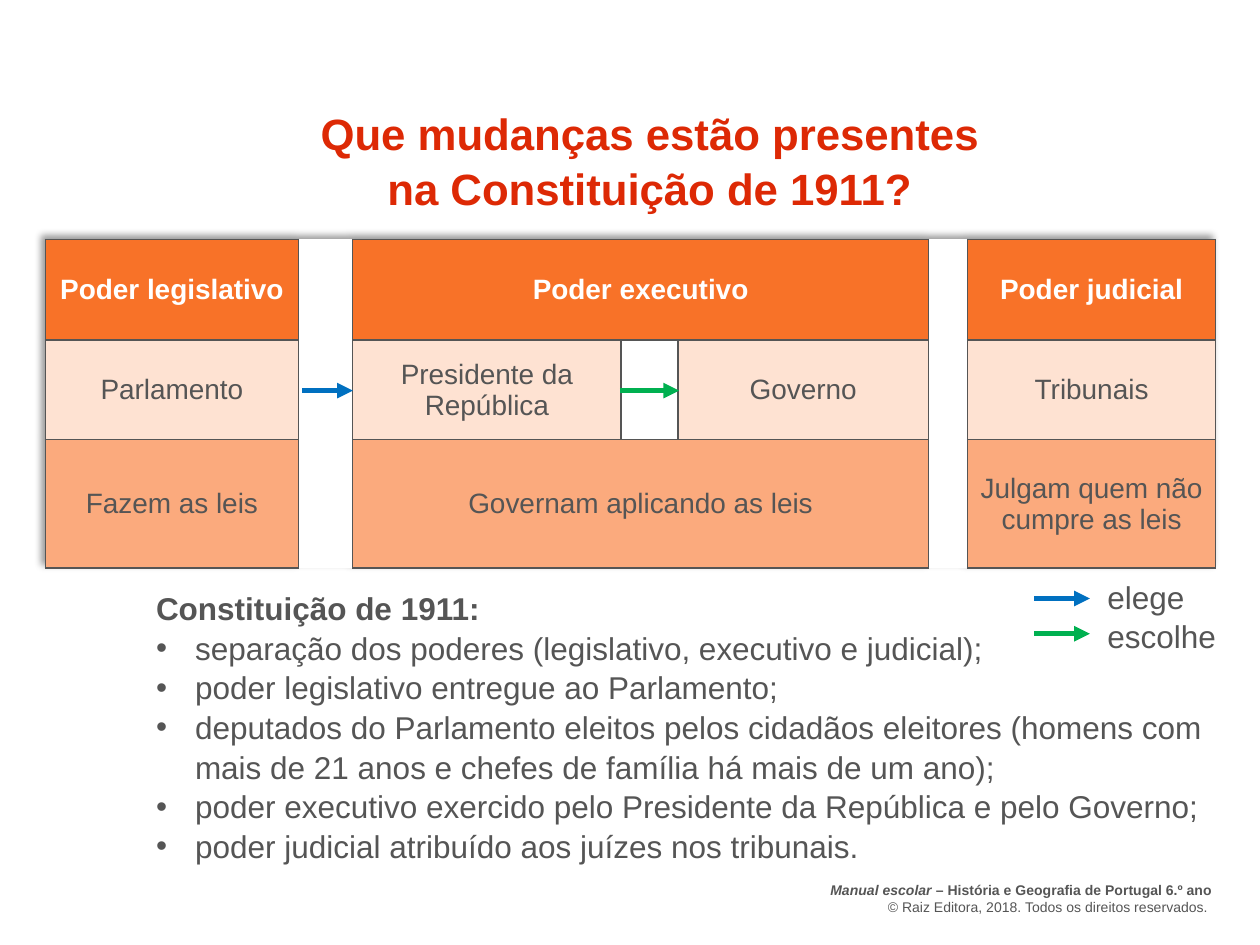
"""Build a slide on the powers set out in the Constitution of 1911."""
from lxml.etree import SubElement
from pptx import Presentation
from pptx.dml.color import RGBColor
from pptx.enum.shapes import MSO_CONNECTOR
from pptx.enum.text import MSO_ANCHOR, PP_ALIGN
from pptx.oxml import parse_xml
from pptx.oxml.ns import nsdecls, qn
from pptx.util import Inches, Pt


def hue(code):
    return RGBColor.from_string(code)


def write(para, text, size, code, bold=False, slant=False):
    run = para.add_run()
    run.text = text
    font = run.font
    font.name, font.size = "Arial", Pt(size)
    font.bold, font.italic = bold, slant
    font.color.rgb = hue(code)


GREY, RED, BLUE, GREEN = "555555", "DD2905", "0070C0", "00B050"
DARK, PALE, MID, WHITE = "F87228", "FEE2D2", "FBAA7D", "FFFFFF"
LEFT, MIDDLE, RIGHT = PP_ALIGN.LEFT, PP_ALIGN.CENTER, PP_ALIGN.RIGHT

deck = Presentation()
deck.slide_width, deck.slide_height = Inches(10), Inches(7.5)
unit = deck.slide_width // 100
slide = deck.slides.add_slide(deck.slide_layouts[6])

points = [
    "separação dos poderes (legislativo, executivo e judicial);",
    "poder legislativo entregue ao Parlamento;",
    "deputados do Parlamento eleitos pelos cidadãos eleitores (homens com "
    "mais de 21 anos e chefes de família há mais de um ano);",
    "poder executivo exercido pelo Presidente da República e pelo Governo;",
    "poder judicial atribuído aos juízes nos tribunais.",
]
boxes = [
    ((61.9, 69.4, 35.3, 3.7), RIGHT, 8, GREY, [
        [("Manual escolar ", True, True),
         ("– História e Geografia de Portugal 6.º ano", True)],
        [("© Raiz Editora, 2018. Todos os direitos reservados. ",)]]),
    ((11.4, 46.1, 89.4, 25.2), LEFT, 18, GREY,
     [[("Constituição de 1911:", True)]] + [[(point,)] for point in points]),
    ((22.5, 7.8, 58.1, 10.3), MIDDLE, 25, RED,
     [[("Que mudanças estão presentes na Constituição de 1911?", True)]]),
    ((86.9, 45.2, 11.2, 7.1), LEFT, 18, GREY, [[("elege",)], [("escolhe",)]]),
]
for place, align, size, code, paras in boxes:
    frame = slide.shapes.add_textbox(*[int(n * unit) for n in place]).text_frame
    frame.word_wrap = True
    for i, runs in enumerate(paras):
        para = frame.paragraphs[0] if i == 0 else frame.add_paragraph()
        para.alignment, para.line_spacing = align, 1.05
        if runs[0][0] in points:
            props = para._p.get_or_add_pPr()
            props.set("marL", str(Inches(0.31)))
            props.set("indent", str(-Inches(0.31)))
            SubElement(props, qn("a:buFont"), typeface="Arial")
            SubElement(props, qn("a:buChar"), char="•")
        for text, *style in runs:
            write(para, text, size, code, *style)

cols = [20.1, 4.3, 21.3, 4.5, 19.9, 3.1, 19.7]
rows = [8, 7.9, 10.2]
gaps = [1, 5]
cells = [
    (DARK, WHITE, {0: "Poder legislativo", 2: "Poder executivo",
                   6: "Poder judicial"}),
    (PALE, GREY, {0: "Parlamento", 2: "Presidente da República",
                  4: "Governo", 6: "Tribunais"}),
    (MID, GREY, {0: "Fazem as leis", 2: "Governam aplicando as leis",
                 6: "Julgam quem não\ncumpre as leis"}),
]
area = [int(n * unit) for n in (3.6, 19, sum(cols), sum(rows))]
table = slide.shapes.add_table(len(rows), len(cols), *area).table
table.first_row = table.horz_banding = False
table._tbl.tblPr.insert(0, parse_xml(
    f'<a:effectLst {nsdecls("a")}><a:outerShdw blurRad="50800" dist="38100" '
    'dir="13500000" algn="br" rotWithShape="0"><a:prstClr val="black">'
    '<a:alpha val="40000"/></a:prstClr></a:outerShdw></a:effectLst>'))
for c, wide in enumerate(cols):
    table.columns[c].width = int(wide * unit)
for r, (shade, ink, words) in enumerate(cells):
    table.rows[r].height = int(rows[r] * unit)
    if 4 not in words:
        table.cell(r, 2).merge(table.cell(r, 4))
    for c in range(len(cols)):
        cell = table.cell(r, c)
        props = cell._tc.get_or_add_tcPr()
        for side in "LRTB":
            edge = SubElement(props, qn(f"a:ln{side}"), w=str(Pt(1)))
            if c in gaps and side in "TB":
                SubElement(edge, qn("a:noFill"))
            else:
                paint = SubElement(edge, qn("a:solidFill"))
                SubElement(paint, qn("a:srgbClr"), val=GREY)
        cell.fill.solid()
        cell.fill.fore_color.rgb = hue(shade if c in words else WHITE)
        if c not in words:
            continue
        cell.vertical_anchor = MSO_ANCHOR.MIDDLE
        for i, text in enumerate(words[c].split("\n")):
            frame = cell.text_frame
            para = frame.paragraphs[0] if i == 0 else frame.add_paragraph()
            para.alignment = MIDDLE
            write(para, text, 16, ink, r == 0)

arrows = [(24, 28, 31, BLUE), (49.2, 53.9, 31, GREEN),
          (82.1, 86.5, 47.5, BLUE), (82.1, 86.5, 50.3, GREEN)]
for start, end, top, code in arrows:
    ends = [int(n * unit) for n in (start, top, end, top)]
    arrow = slide.shapes.add_connector(MSO_CONNECTOR.STRAIGHT, *ends)
    arrow.line.width = Pt(3)
    arrow.line.color.rgb = hue(code)
    SubElement(arrow.line._get_or_add_ln(), qn("a:tailEnd"), type="triangle")
    SubElement(arrow._element.spPr, qn("a:effectLst"))

deck.save("out.pptx")
